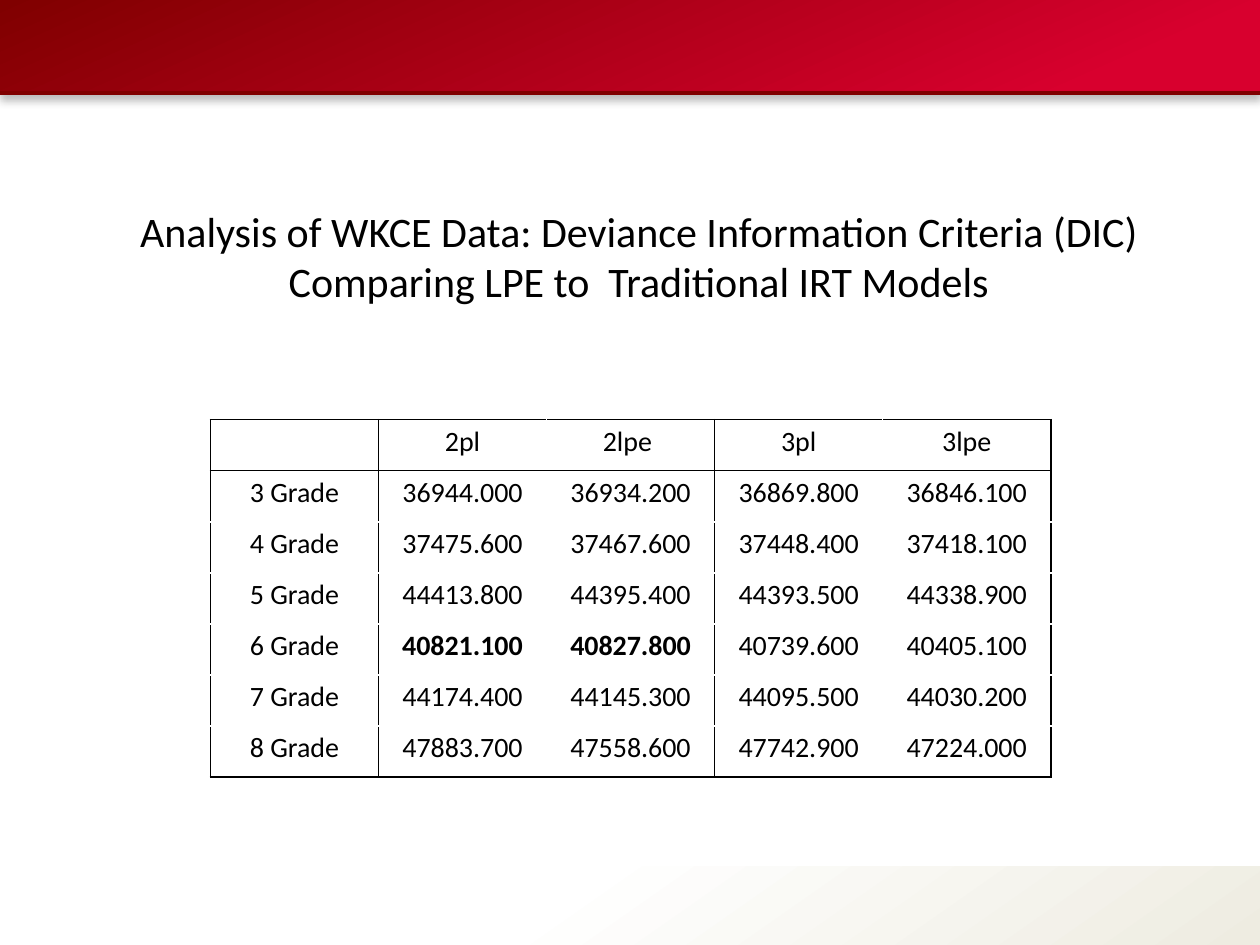
import pptx
import pptx.dml.color
import pptx.enum.shapes
import pptx.enum.text
import pptx.oxml
import pptx.oxml.ns
import pptx.util
from pptx.util import Inches

RGBColor = pptx.dml.color.RGBColor
BLACK = RGBColor(0x00, 0x00, 0x00)
WHITE = RGBColor(0xFF, 0xFF, 0xFF)
MAROON = RGBColor(0x80, 0x00, 0x00)
CRIMSON = RGBColor(0xD8, 0x00, 0x2E)
CREAM = RGBColor(0xEE, 0xEC, 0xE1)
FONT = "Calibri"
NAMESPACE = pptx.oxml.ns.nsdecls("a")

TITLE = ("Analysis of WKCE Data: Deviance Information Criteria (DIC) "
         "Comparing LPE to  Traditional IRT Models")
ROWS = [
    ["", "2pl", "2lpe ", "3pl", "3lpe"],
    ["3 Grade", "36944.000", "36934.200", "36869.800", "36846.100"],
    ["4 Grade", "37475.600", "37467.600", "37448.400", "37418.100"],
    ["5 Grade", "44413.800", "44395.400", "44393.500", "44338.900"],
    ["6 Grade", "40821.100", "40827.800", "40739.600", "40405.100"],
    ["7 Grade", "44174.400", "44145.300", "44095.500", "44030.200"],
    ["8 Grade", "47883.700", "47558.600", "47742.900", "47224.000"],
]
BOLD_VALUES = {"40821.100", "40827.800"}
# Grid lines drawn in black, counted from the left and from the top
BLACK_COLUMN_EDGES = {0, 1, 3, 5}
BLACK_ROW_EDGES = {0, 1, 7}


def add_band(slide, top, width, height, stops, angle):
    """Add a gradient band; the angle runs clockwise."""
    band = slide.shapes.add_shape(
        pptx.enum.shapes.MSO_SHAPE.RECTANGLE, 0, Inches(top), Inches(width), Inches(height))
    band.shadow.inherit = False
    band.line.fill.background()
    band.fill.gradient()
    band.fill.gradient_angle = 360 - angle
    for gradient_stop, (position, color) in zip(band.fill.gradient_stops, stops):
        gradient_stop.position = position
        gradient_stop.color.rgb = color
    return band


def add_drop_shadow(shape):
    effects = shape._element.spPr.find(pptx.oxml.ns.qn("a:effectLst"))
    effects.append(pptx.oxml.parse_xml(
        f'<a:outerShdw {NAMESPACE} blurRad="{pptx.util.Pt(5)}" dist="{pptx.util.Pt(3.8)}" '
        f'dir="5400000" algn="t" rotWithShape="0"><a:srgbClr val="{BLACK}">'
        '<a:alpha val="25000"/></a:srgbClr></a:outerShdw>'))


def add_rule(slide, top, width):
    rule = slide.shapes.add_connector(
        pptx.enum.shapes.MSO_CONNECTOR.STRAIGHT, 0, Inches(top), Inches(width), Inches(top))
    rule.line.color.rgb = MAROON
    rule.line.width = pptx.util.Pt(2)
    rule._element.spPr.append(pptx.oxml.parse_xml(f"<a:effectLst {NAMESPACE}/>"))


def format_text(text_frame, size, bold=False):
    paragraph = text_frame.paragraphs[0]
    paragraph.alignment = pptx.enum.text.PP_ALIGN.CENTER
    for run in paragraph.runs:
        run.font.name = FONT
        run.font.size = pptx.util.Pt(size)
        run.font.bold = bold
        run.font.color.rgb = BLACK
    return paragraph


def add_title(slide):
    box = slide.shapes.add_textbox(Inches(0.89), Inches(1.09), Inches(8.36), Inches(5.58))
    text_frame = box.text_frame
    text_frame.word_wrap = True
    text_frame.margin_top = Inches(0.54)
    text_frame.text = TITLE
    format_text(text_frame, 24)


def set_borders(cell, row, column):
    sides = {
        "lnL": column in BLACK_COLUMN_EDGES,
        "lnR": column + 1 in BLACK_COLUMN_EDGES,
        "lnT": row in BLACK_ROW_EDGES,
        "lnB": row + 1 in BLACK_ROW_EDGES,
    }
    properties = cell._tc.get_or_add_tcPr()
    for side, is_black in sides.items():
        color = BLACK if is_black else WHITE
        properties.append(pptx.oxml.parse_xml(
            f'<a:{side} {NAMESPACE} w="{pptx.util.Pt(1)}"><a:solidFill>'
            f'<a:srgbClr val="{color}"/></a:solidFill></a:{side}>'))


def add_criteria_table(slide):
    table = slide.shapes.add_table(
        len(ROWS), len(ROWS[0]), Inches(1.67), Inches(3.33), Inches(6.67), Inches(2.84)).table
    table.horz_banding = False
    table.first_row = False
    for row, values in enumerate(ROWS):
        for column, value in enumerate(values):
            cell = table.cell(row, column)
            cell.margin_left = cell.margin_right = Inches(0.07)
            cell.margin_top = cell.margin_bottom = 0
            set_borders(cell, row, column)
            cell.fill.solid()
            cell.fill.fore_color.rgb = WHITE
            cell.text_frame.text = value
            paragraph = format_text(cell.text_frame, 16, value in BOLD_VALUES)
            paragraph.line_spacing = 1.15


def main():
    presentation = pptx.Presentation()
    presentation.slide_width = Inches(10)
    presentation.slide_height = Inches(7.5)
    slide = presentation.slides.add_slide(presentation.slide_layouts[6])

    # Footer and header bands
    add_band(slide, 6.88, 10, 0.62, [(0.43, WHITE), (1, CREAM)], 55)
    header = add_band(slide, 0, 10.01, 0.74, [(0, MAROON), (0.87, CRIMSON)], 66)
    add_drop_shadow(header)
    add_rule(slide, 0.74, 10.01)

    # Title and table
    add_title(slide)
    add_criteria_table(slide)

    presentation.save("out.pptx")


if __name__ == "__main__":
    main()
